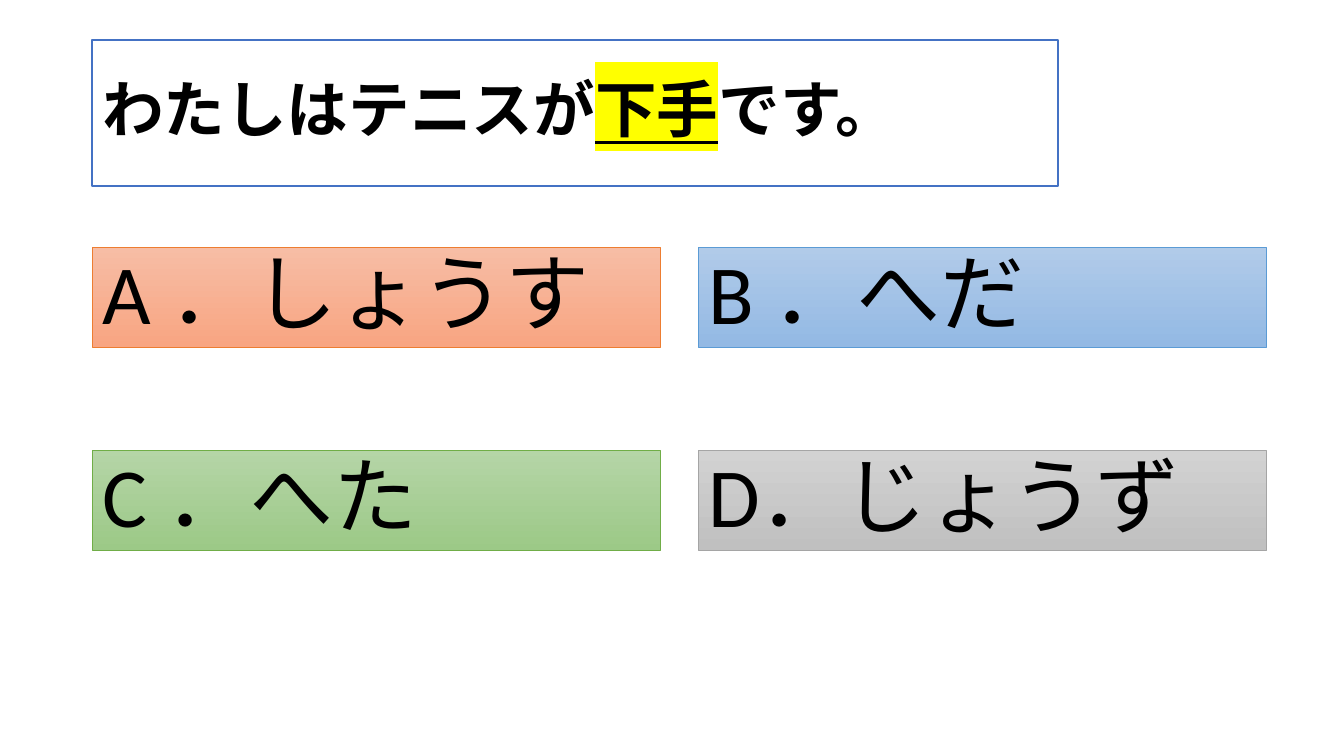
from lxml import etree
from pptx import Presentation
from pptx.dml.color import RGBColor
from pptx.enum.text import MSO_ANCHOR, MSO_AUTO_SIZE, PP_ALIGN
from pptx.oxml.ns import qn
from pptx.util import Emu, Pt

PX = 914400 / 100.8
COLORS = {
    "white": "FFFFFF", "black": "000000", "frame": "4472C4", "marker": "FFFF00",
    "orange": ("F7BDA5", "F8A582", "ED7D31"),
    "blue": ("B1CBE9", "93B9E4", "5B9BD5"),
    "green": ("B5D5A7", "9CC987", "70AD47"),
    "gray": ("D2D2D2", "C0C0C0", "A5A5A5"),
}


def place(box, left, top, width, height, anchor):
    """Position a placeholder and return its first paragraph, ready for runs."""
    box.left, box.top = Emu(round(left * PX)), Emu(round(top * PX))
    box.width, box.height = Emu(round(width * PX)), Emu(round(height * PX))
    frame = box.text_frame
    frame.word_wrap = True
    frame.auto_size = MSO_AUTO_SIZE.NONE
    frame.vertical_anchor = anchor
    paragraph = frame.paragraphs[0]
    paragraph.alignment = PP_ALIGN.LEFT
    paragraph.line_spacing = 0.9
    return paragraph


def add_run(paragraph, text, size, bold):
    run = paragraph.add_run()
    run.text = text
    run.font.size = Pt(size)
    run.font.bold = bold
    run.font.color.rgb = RGBColor.from_string(COLORS["black"])
    run.font.name = "Calibri"
    return run


prs = Presentation()
prs.slide_width, prs.slide_height = Emu(round(1344 * PX)), Emu(round(756 * PX))
# The Comparison layout has a title and four body placeholders
slide = prs.slides.add_slide(prs.slide_layouts[4])

question = slide.shapes.title
sentence = place(question, 92, 40, 966, 146, MSO_ANCHOR.MIDDLE)
question.fill.solid()
question.fill.fore_color.rgb = RGBColor.from_string(COLORS["white"])
question.line.color.rgb = RGBColor.from_string(COLORS["frame"])
question.line.width = Pt(1)

add_run(sentence, "わたしはテニスが", 44, True)
keyword = add_run(sentence, "下手", 44, True)
add_run(sentence, "です。", 44, True)
keyword.font.underline = True
highlight = etree.Element(qn("a:highlight"))
etree.SubElement(highlight, qn("a:srgbClr"), val=COLORS["marker"])
keyword.font._element.find(qn("a:latin")).addprevious(highlight)

answers = [
    ("A ．しょうす", "orange"),
    ("B ．へだ", "blue"),
    ("C ．へた", "green"),
    ("D．じょうず", "gray"),
]
for i, (answer, color) in enumerate(answers):
    row, column = divmod(i, 2)
    option = slide.placeholders[i + 1]
    line = place(option, 92 + 606 * column, 247 + 203 * row, 568, 100, MSO_ANCHOR.TOP)
    line.space_before = Pt(10)
    properties = line._p.get_or_add_pPr()
    properties.set("marL", "0")
    properties.set("indent", "0")
    etree.SubElement(properties, qn("a:buNone"))
    add_run(line, answer, 60, False)

    top_color, bottom_color, outline = COLORS[color]
    option.fill.gradient()
    option.fill.gradient_angle = 270
    for stop, shade in zip(option.fill.gradient_stops, (top_color, bottom_color)):
        stop.color.rgb = RGBColor.from_string(shade)
    option.line.color.rgb = RGBColor.from_string(outline)
    option.line.width = Pt(0.5)

prs.save("out.pptx")
